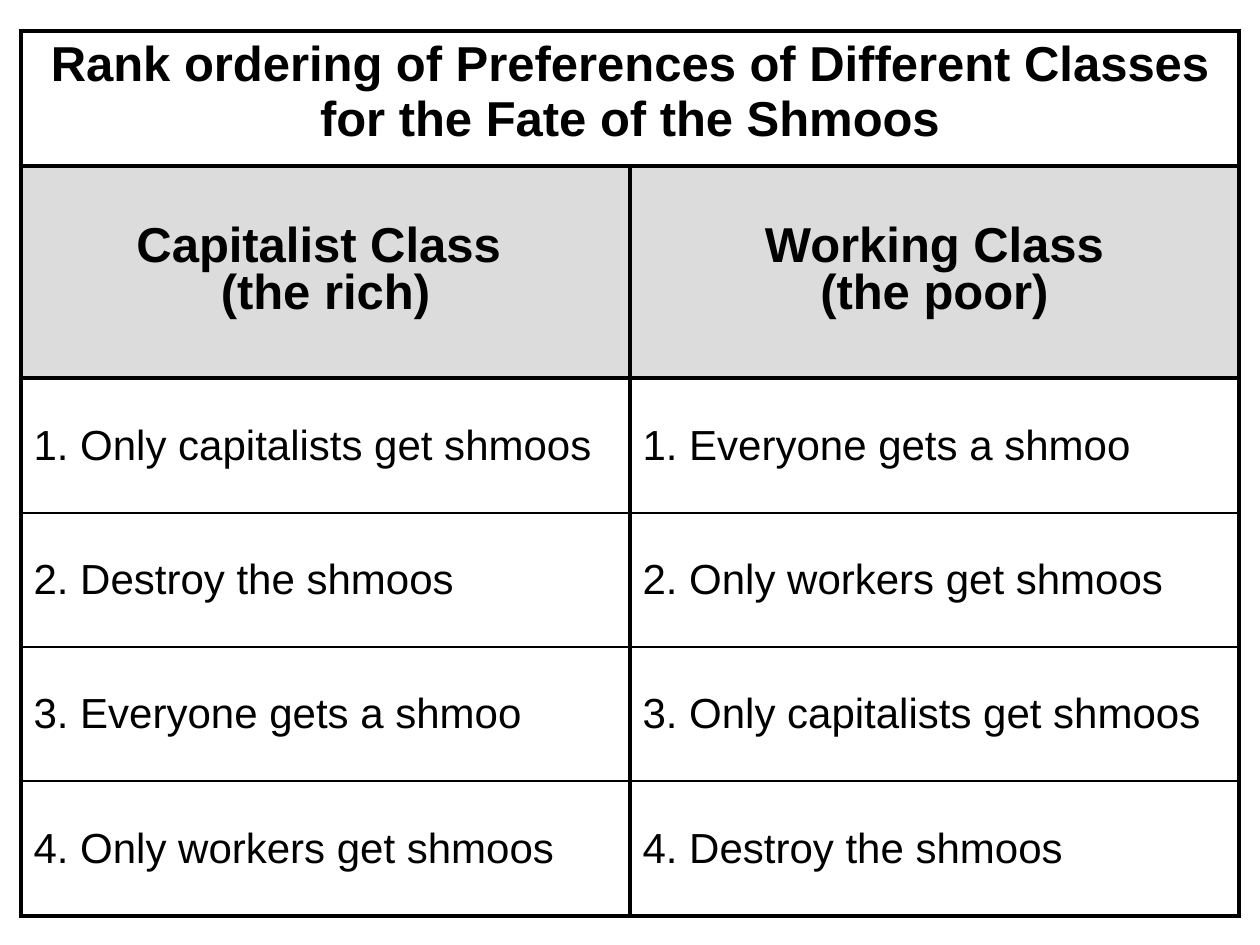
from lxml import etree
from pptx import Presentation
from pptx.dml.color import RGBColor
from pptx.enum.text import MSO_ANCHOR, PP_ALIGN
from pptx.oxml.ns import qn
from pptx.util import Pt

PX = 914400 // 126
BLACK = RGBColor(0x00, 0x00, 0x00)
WHITE = RGBColor(0xFF, 0xFF, 0xFF)
GRAY = RGBColor(0xDC, 0xDC, 0xDC)
CENTER, LEFT = PP_ALIGN.CENTER, PP_ALIGN.LEFT
TOP, MIDDLE = MSO_ANCHOR.TOP, MSO_ANCHOR.MIDDLE

ROW_HEIGHTS = [135, 212, 135, 134, 134, 135]
COL_WIDTH = 609
ROWS = [
    ["Rank ordering of Preferences of Different Classes for the Fate of the Shmoos", ""],
    ["Capitalist Class \n(the rich)", "Working Class\n(the poor)"],
    ["1. Only capitalists get shmoos", "1. Everyone gets a shmoo"],
    ["2. Destroy the shmoos", "2. Only workers get shmoos"],
    ["3. Everyone gets a shmoo", "3. Only capitalists get shmoos"],
    ["4. Only workers get shmoos", "4. Destroy the shmoos"],
]


def set_borders(cell, widths):
    tcPr = cell._tc.get_or_add_tcPr()
    for i, (side, width) in enumerate(widths.items()):
        ln = etree.Element(qn(f"a:ln{side}"), w=str(Pt(width)))
        fill = etree.SubElement(ln, qn("a:solidFill"))
        etree.SubElement(fill, qn("a:srgbClr"), val=str(BLACK))
        tcPr.insert(i, ln)


prs = Presentation()
prs.slide_width, prs.slide_height = 1260 * PX, 945 * PX
s = prs.slides.add_slide(prs.slide_layouts[6])

# Table frame
table = s.shapes.add_table(len(ROWS), 2, 21 * PX, 31 * PX,
                           2 * COL_WIDTH * PX, sum(ROW_HEIGHTS) * PX).table
table.first_row = False
table.horz_banding = False
for col in table.columns:
    col.width = COL_WIDTH * PX
for row, height in zip(table.rows, ROW_HEIGHTS):
    row.height = height * PX
table.cell(0, 0).merge(table.cell(0, 1))

# Title row, class headings, then the ranked preferences
for r, texts in enumerate(ROWS):
    heading = r < 2
    for c, text in enumerate(texts):
        cell = table.cell(r, c)
        cell.fill.solid()
        cell.fill.fore_color.rgb = GRAY if r == 1 else WHITE
        set_borders(cell, {"L": 3, "R": 3, "T": 3 if r <= 2 else 1,
                           "B": 3 if r in (0, 1, 5) else 1})
        if cell.is_spanned:
            continue
        cell.vertical_anchor = TOP if r == 0 else MIDDLE
        cell.text = text
        for p in cell.text_frame.paragraphs:
            p.alignment = CENTER if heading else LEFT
            p.line_spacing = 0.85 if r == 1 else 1.0
            p.font.name = "Arial"
            p.font.size = Pt(28 if heading else 24)
            p.font.bold = heading
            p.font.color.rgb = BLACK

prs.save("out.pptx")
